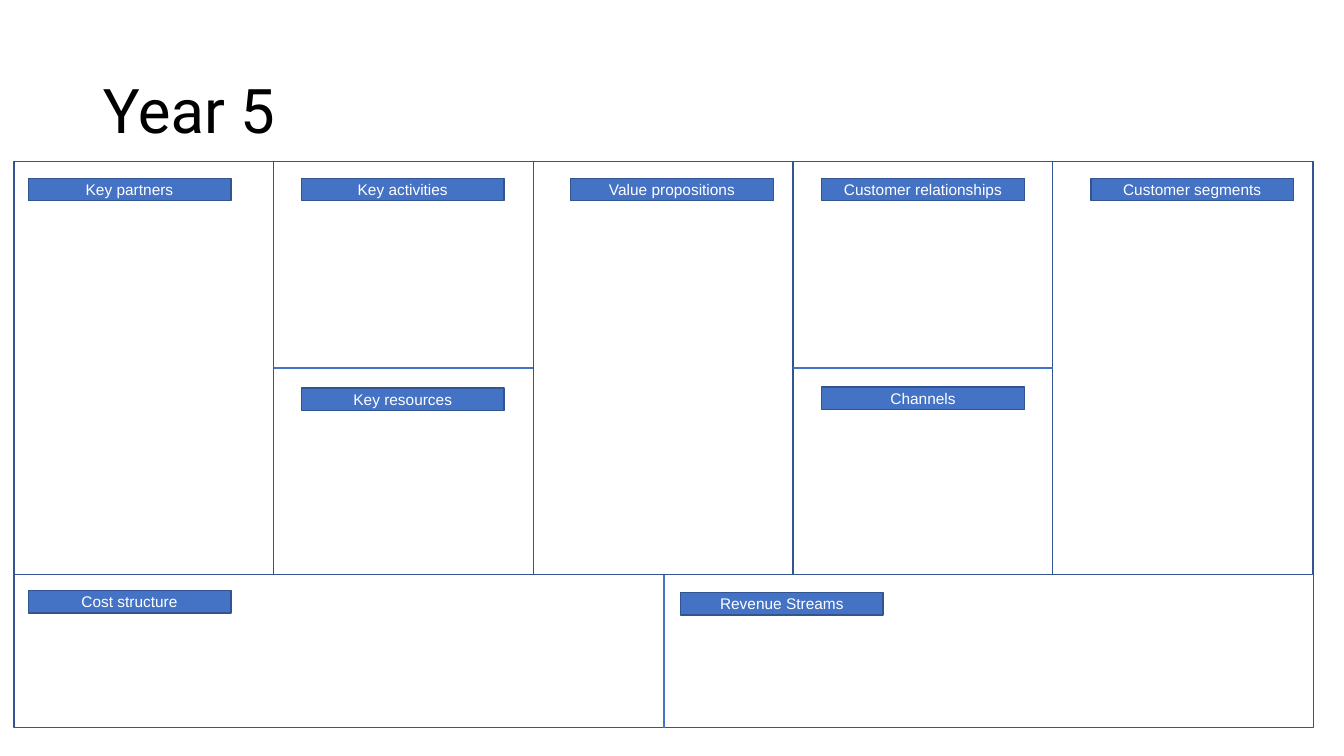
from lxml import etree
from pptx import Presentation
from pptx.dml.color import RGBColor
from pptx.enum.shapes import MSO_CONNECTOR, MSO_SHAPE
from pptx.enum.text import MSO_ANCHOR, PP_ALIGN
from pptx.oxml.ns import qn
from pptx.util import Inches, Pt

TITLE = "Year 5"
LABELS = [  # text, left, top
    ("Key partners", 0.28, 1.77),
    ("Key activities", 2.99, 1.77),
    ("Key resources", 2.99, 3.85),
    ("Value propositions", 5.66, 1.77),
    ("Customer relationships", 8.15, 1.77),
    ("Channels", 8.15, 3.84),
    ("Customer segments", 10.82, 1.77),
    ("Cost structure", 0.28, 5.86),
    ("Revenue Streams", 6.75, 5.88),
]
LABEL_W, LABEL_H = 2.01, 0.22

LEFT, TOP, WIDTH, HEIGHT = 0.14, 1.6, 12.89, 5.62
COLUMNS, COLUMN_W, COLUMN_H = 5, 2.575, 4.1
SPLIT_COLUMNS = (1, 3)

BLACK = RGBColor(0x00, 0x00, 0x00)
WHITE = RGBColor(0xFF, 0xFF, 0xFF)
BLUE = RGBColor(0x44, 0x72, 0xC4)
DARK_BLUE = RGBColor(0x32, 0x54, 0x91)

RECTANGLE = MSO_SHAPE.RECTANGLE
STRAIGHT = MSO_CONNECTOR.STRAIGHT
MIDDLE = MSO_ANCHOR.MIDDLE
LEFT_ALIGN, CENTER = PP_ALIGN.LEFT, PP_ALIGN.CENTER


def set_text(shape, text, size, font, color, align):
    tf = shape.text_frame
    tf.word_wrap = True
    tf.vertical_anchor = MIDDLE
    p = tf.paragraphs[0]
    p.alignment = align
    r = p.add_run()
    r.text = text
    for name, value in {"size": Pt(size), "name": font}.items():
        setattr(r.font, name, value)
    r.font.color.rgb = color
    return tf


def add_box(s, left, top, width, height, fill=None):
    sp = s.shapes.add_shape(RECTANGLE, *map(Inches, (left, top, width, height)))
    sp.shadow.inherit = False
    if fill is None:
        sp.fill.background()
    else:
        sp.fill.solid()
        sp.fill.fore_color.rgb = fill
    sp.line.color.rgb = DARK_BLUE
    sp.line.width = Pt(1)
    return sp


def add_divider(s, x1, y1, x2, y2):
    line = s.shapes.add_connector(STRAIGHT, *map(Inches, (x1, y1, x2, y2)))
    line.line.color.rgb = BLUE
    line.line.width = Pt(1)
    etree.SubElement(line._element.spPr, qn("a:effectLst"))


def add_label(s, text, left, top):
    sp = add_box(s, left, top, LABEL_W, LABEL_H, BLUE)
    tf = set_text(sp, text, 11, "Arial", WHITE, CENTER)
    for side in ("left", "right", "top", "bottom"):
        setattr(tf, f"margin_{side}", 0)


def main():
    prs = Presentation()
    prs.slide_width, prs.slide_height = Inches(13.33), Inches(7.5)
    s = prs.slides.add_slide(prs.slide_layouts[5])

    title = s.shapes.title
    box = {"left": 0.92, "top": 0.4, "width": 11.5, "height": 1.45}
    for name, value in box.items():
        setattr(title, name, Inches(value))
    tf = set_text(title, TITLE, 44, "Roboto", BLACK, LEFT_ALIGN)
    tf.paragraphs[0].line_spacing = 0.9

    add_box(s, LEFT, TOP, WIDTH, HEIGHT)
    column_lefts = [LEFT + i * COLUMN_W for i in range(COLUMNS)]
    for x in column_lefts:
        add_box(s, x, TOP, COLUMN_W, COLUMN_H)

    center = LEFT + WIDTH / 2
    add_divider(s, center, TOP + COLUMN_H, center, TOP + HEIGHT)
    middle = TOP + COLUMN_H / 2
    for i in SPLIT_COLUMNS:
        add_divider(s, column_lefts[i], middle, column_lefts[i] + COLUMN_W, middle)

    for label in LABELS:
        add_label(s, *label)

    prs.save("out.pptx")


if __name__ == "__main__":
    main()
